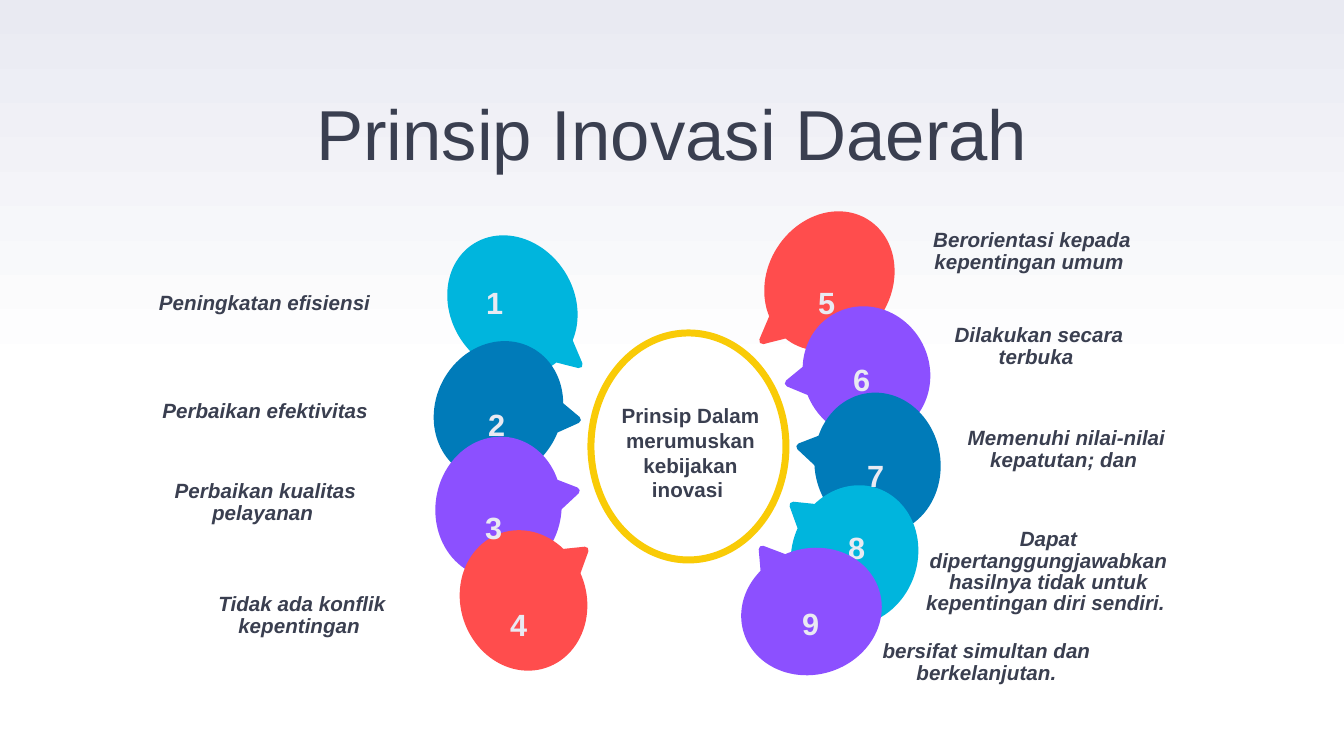
import copy
from dataclasses import dataclass

import lxml.etree
import pptx
import pptx.dml.color
import pptx.enum.shapes
import pptx.enum.text
import pptx.oxml.ns
import pptx.shapes.autoshape
import pptx.slide
import pptx.util

WIDTH, HEIGHT = 1344, 756
EMU_PER_PX = 12192000 / WIDTH
FONT = "Arial"
INK, PALE, WHITE, GOLD = "3A3F50", "E9EAF2", "FFFFFF", "F9CB07"
CYAN, BLUE, PURPLE, RED = "00B5DD", "007BB9", "8C50FF", "FF4D4D"
SHAPE = pptx.enum.shapes.MSO_SHAPE
Box = tuple[int, int, int, int]


@dataclass
class Principle:
    number: int
    label: str
    color: str
    bubble: Box
    angle: float
    mirrored: bool
    number_at: tuple[int, int]
    label_at: tuple[int, int]
    label_width: int


PRINCIPLES = [
    Principle(5, "Berorientasi kepada kepentingan umum ", RED,
              (771, 212, 117, 138), 32.4, False, (765, 273), (877, 226), 310),
    Principle(6, "Dilakukan secara terbuka ", PURPLE,
              (803, 313, 127, 119), 62.6, False, (800, 350), (908, 321), 262),
    Principle(7, "Memenuhi nilai-nilai kepatutan; dan ", BLUE,
              (810, 404, 135, 119), 81.4, False, (814, 446), (927, 424), 279),
    Principle(8, "Dapat dipertanggungjawabkan hasilnya tidak untuk kepentingan diri sendiri. ", CYAN,
              (787, 496, 135, 119), 108.5, False, (795, 518), (896, 525), 305),
    Principle(1, "Peningkatan efisiensi ", CYAN,
              (454, 236, 117, 138), -32.4, True, (433, 273), (132, 289), 271),
    Principle(2, "Perbaikan efektivitas ", BLUE,
              (431, 351, 135, 119), -62.6, True, (435, 395), (113, 396), 310),
    Principle(3, "Perbaikan kualitas pelayanan ", PURPLE,
              (431, 448, 135, 119), -81.4, True, (432, 498), (113, 477), 305),
    Principle(4, "Tidak ada konflik kepentingan ", RED,
              (456, 541, 135, 119), -108.5, True, (457, 595), (163, 590), 278),
]
LAST_PRINCIPLE = Principle(9, "bersifat simultan dan berkelanjutan.", PURPLE,
                           (744, 552, 135, 119), 162.4, True, (749, 594), (834, 637), 305)


def px(n: int) -> int:
    return round(n * EMU_PER_PX)


def rgb(color: str) -> pptx.dml.color.RGBColor:
    return pptx.dml.color.RGBColor.from_string(color)


def qn(tag: str) -> str:
    return pptx.oxml.ns.qn(tag)


def paint_background(s: pptx.slide.Slide) -> None:
    """Fade from pale at the top to white at mid-height and below."""
    fill = s.background.fill
    fill.gradient()
    fill.gradient_angle = 90
    for stop, color in zip(fill.gradient_stops, (WHITE, PALE)):
        stop.color.rgb = rgb(color)
    first = s.element.find(".//" + qn("a:gs"))
    middle = copy.deepcopy(first)
    first.set("pos", "0")
    middle.set("pos", "50000")
    first.addnext(middle)


def add_outlined(s: pptx.slide.Slide, kind: SHAPE, box: Box, fill: str,
                 line: str) -> pptx.shapes.autoshape.Shape:
    sp = s.shapes.add_shape(kind, *map(px, box))
    sp.shadow.inherit = False
    sp.fill.solid()
    sp.fill.fore_color.rgb = rgb(fill)
    sp.line.color.rgb = rgb(line)
    sp.line.width = pptx.util.Pt(5)
    lxml.etree.SubElement(sp.element.spPr.find(qn("a:ln")), qn("a:round"))
    return sp


def add_text(s: pptx.slide.Slide, box: Box, text: str, size: float, color: str = INK,
             bold: bool = True, italic: bool = False, spacing: float | None = None,
             margins: tuple[int, int] = (10, 5), grow: bool = False,
             baseline: int = 0) -> None:
    """Centred text; margins are side and top, baseline is in thousandths of a percent."""
    tf = s.shapes.add_textbox(*map(px, box)).text_frame
    tf.word_wrap = True
    tf.margin_left = tf.margin_right = px(margins[0])
    tf.margin_top, tf.margin_bottom = px(margins[1]), px(5)
    if grow:
        tf.auto_size = pptx.enum.text.MSO_AUTO_SIZE.SHAPE_TO_FIT_TEXT
    tf.text = text
    p = tf.paragraphs[0]
    p.alignment = pptx.enum.text.PP_ALIGN.CENTER
    if spacing:
        p.line_spacing = spacing
    font = p.runs[0].font
    font.name, font.size = FONT, pptx.util.Pt(size)
    font.bold, font.italic = bold, italic
    font.color.rgb = rgb(color)
    if baseline:
        p.runs[0].font._element.set("baseline", str(baseline))


def add_bubble(s: pptx.slide.Slide, item: Principle) -> None:
    sp = add_outlined(s, SHAPE.OVAL_CALLOUT, item.bubble, item.color, item.color)
    sp.rotation = item.angle
    if item.mirrored:
        sp.element.spPr.find(qn("a:xfrm")).set("flipH", "1")


def add_captions(s: pptx.slide.Slide, item: Principle) -> None:
    add_text(s, (*item.number_at, 123, 53), str(item.number), 37.7, PALE,
             grow=True, baseline=30000)
    add_text(s, (*item.label_at, item.label_width, 58), item.label, 14.7,
             italic=True, spacing=0.86)


def main() -> None:
    prs = pptx.Presentation()
    prs.slide_width, prs.slide_height = px(WIDTH), px(HEIGHT)
    s = prs.slides.add_slide(prs.slide_layouts[6])
    paint_background(s)
    add_text(s, (46, 93, 1252, 62), "Prinsip Inovasi Daerah", 50.5, bold=False,
             spacing=0.8, margins=(11, 13))
    add_outlined(s, SHAPE.OVAL, (591, 333, 195, 227), WHITE, GOLD)
    add_text(s, (607, 398, 167, 111), "Prinsip Dalam merumuskan kebijakan inovasi ",
             14.7, grow=True)
    for item in PRINCIPLES:
        add_bubble(s, item)
    for item in PRINCIPLES:
        add_captions(s, item)
    add_bubble(s, LAST_PRINCIPLE)
    add_captions(s, LAST_PRINCIPLE)
    prs.save("out.pptx")


if __name__ == "__main__":
    main()
